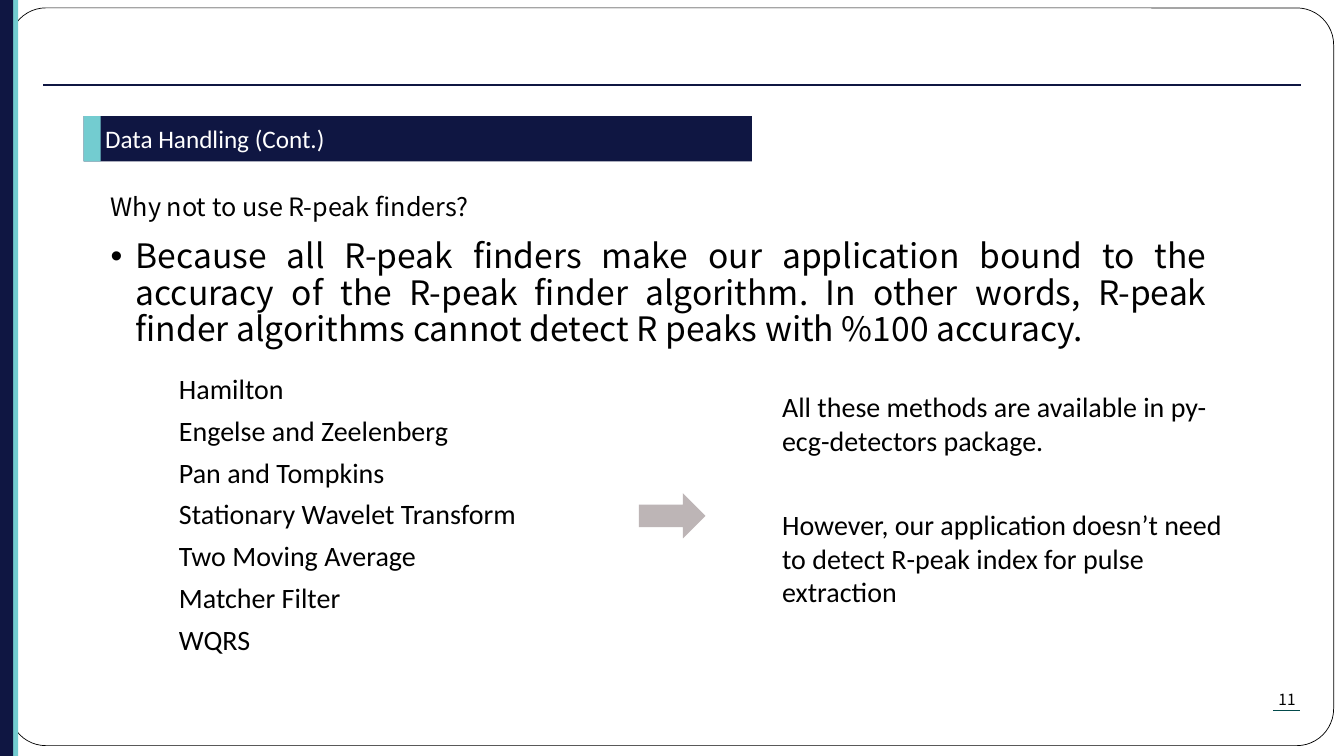
"""Build the Data Handling slide on R-peak finders."""
from dataclasses import dataclass

from lxml.etree import SubElement
from pptx import Presentation
from pptx.dml.color import RGBColor
from pptx.enum.shapes import MSO_CONNECTOR, MSO_SHAPE
from pptx.enum.text import MSO_ANCHOR, PP_ALIGN
from pptx.oxml.ns import qn
from pptx.slide import Slide
from pptx.util import Cm, Pt

NAVY = RGBColor(0x0F, 0x16, 0x42)
TURQUOISE = RGBColor(0x73, 0xCC, 0xD0)
TEAL = RGBColor(0x02, 0x4A, 0x4B)
GREY = RGBColor(0xBD, 0xB5, 0xB6)
WHITE = RGBColor(0xFF, 0xFF, 0xFF)
BLACK = RGBColor(0x00, 0x00, 0x00)

LATIN_FONT = "Calibri"
KOREAN_FONT = "Noto Sans CJK KR"
ITEM_GAP = 5.8
STATEMENT_GAP = 36


@dataclass(frozen=True)
class Box:
    left: float
    top: float
    width: float
    height: float


@dataclass(frozen=True)
class Panel:
    box: Box
    fill: RGBColor
    kind: MSO_SHAPE = MSO_SHAPE.RECTANGLE
    outline: RGBColor | None = None
    corner: float | None = None


@dataclass(frozen=True)
class Rule:
    left: float
    right: float
    height: float
    color: RGBColor
    weight: float


@dataclass(frozen=True)
class TextBlock:
    box: Box
    lines: tuple[str, ...]
    size: int
    font: str = LATIN_FONT
    color: RGBColor = BLACK
    alignment: PP_ALIGN = PP_ALIGN.LEFT
    anchor: MSO_ANCHOR = MSO_ANCHOR.TOP
    opening_gap: float = 0
    gap: float = 0
    spacing: float = 1.0
    inset: float = 0.25
    bullet: bool = False


TITLE_BAR = Box(2.11, 2.93, 16.84, 1.14)

PANELS = (
    Panel(Box(0.23, 0.2, 33.38, 18.59), WHITE, MSO_SHAPE.ROUNDED_RECTANGLE, BLACK, 0.05),
    Panel(Box(0.13, 0, 0.33, 19.05), TURQUOISE),
    Panel(Box(0, 0, 0.33, 19.05), NAVY),
    Panel(TITLE_BAR, NAVY),
    Panel(Box(TITLE_BAR.left, TITLE_BAR.top, 0.43, TITLE_BAR.height), TURQUOISE),
    Panel(Box(16.1, 12.43, 1.68, 1.14), GREY, MSO_SHAPE.RIGHT_ARROW),
)

RULES = (
    Rule(1.09, 32.79, 2.14, NAVY, 1),
    Rule(32.08, 32.77, 17.91, TEAL, 0.5),
)

TEXT_BLOCKS = (
    TextBlock(TITLE_BAR, ("Data Handling (Cont.)",), 18, color=WHITE,
              anchor=MSO_ANCHOR.MIDDLE, inset=0.54),
    TextBlock(Box(2.54, 4.32, 13.59, 1.12), ("Why not to use R-peak finders?",), 18,
              KOREAN_FONT, alignment=PP_ALIGN.JUSTIFY, opening_gap=10, spacing=1.5),
    TextBlock(Box(2.54, 5.92, 28.12, 2.97), (
        "Because all R-peak finders make our application bound to the accuracy of the "
        "R-peak finder algorithm. In other words, R-peak finder algorithms cannot detect "
        "R peaks with %100 accuracy.",), 24, KOREAN_FONT,
              alignment=PP_ALIGN.JUSTIFY, opening_gap=10, spacing=0.9, bullet=True),
    TextBlock(Box(4.26, 9.24, 10.13, 7.52), (
        "Hamilton", "Engelse and Zeelenberg", "Pan and Tompkins",
        "Stationary Wavelet Transform", "Two Moving Average", "Matcher Filter", "WQRS",
    ), 20, opening_gap=ITEM_GAP, gap=ITEM_GAP),
    TextBlock(Box(19.46, 9.7, 11.86, 7.32), (
        "All these methods are available in py-ecg-detectors package.",
        "However, our application doesn’t need to detect R-peak index for pulse extraction",
    ), 20, opening_gap=ITEM_GAP, gap=STATEMENT_GAP),
    TextBlock(Box(31.57, 17.26, 1.73, 0.74), ("11",), 11, KOREAN_FONT,
              alignment=PP_ALIGN.CENTER),
)


def draw_panel(slide: Slide, panel: Panel) -> None:
    box = panel.box
    shape = slide.shapes.add_shape(
        panel.kind, Cm(box.left), Cm(box.top), Cm(box.width), Cm(box.height))
    shape.shadow.inherit = False
    shape.fill.solid()
    shape.fill.fore_color.rgb = panel.fill
    if panel.corner is not None:
        shape.adjustments[0] = panel.corner
    if panel.outline is None:
        shape.line.fill.background()
    else:
        shape.line.color.rgb = panel.outline
        shape.line.width = Pt(0.5)


def draw_rule(slide: Slide, rule: Rule) -> None:
    connector = slide.shapes.add_connector(
        MSO_CONNECTOR.STRAIGHT,
        Cm(rule.left), Cm(rule.height), Cm(rule.right), Cm(rule.height))
    connector.line.color.rgb = rule.color
    connector.line.width = Pt(rule.weight)
    SubElement(connector._element.spPr, qn("a:effectLst"))


def draw_text(slide: Slide, block: TextBlock) -> None:
    box = block.box
    shape = slide.shapes.add_textbox(
        Cm(box.left), Cm(box.top), Cm(box.width), Cm(box.height))
    frame = shape.text_frame
    frame.word_wrap = True
    frame.vertical_anchor = block.anchor
    frame.margin_left = Cm(block.inset)
    for index, line in enumerate(block.lines):
        paragraph = frame.add_paragraph() if index else frame.paragraphs[0]
        paragraph.alignment = block.alignment
        paragraph.line_spacing = block.spacing
        paragraph.space_before = Pt(block.gap if index else block.opening_gap)
        if block.bullet:
            properties = paragraph._p.get_or_add_pPr()
            properties.set("marL", str(Cm(0.63)))
            properties.set("indent", str(Cm(-0.63)))
            SubElement(properties, qn("a:buFont"), typeface="Arial")
            SubElement(properties, qn("a:buChar"), char="•")
        run = paragraph.add_run()
        run.text = line
        run.font.size = Pt(block.size)
        run.font.name = block.font
        run.font.color.rgb = block.color


def main() -> None:
    presentation = Presentation()
    presentation.slide_width = Cm(33.87)
    presentation.slide_height = Cm(19.05)
    slide = presentation.slides.add_slide(presentation.slide_layouts[6])
    for panel in PANELS:
        draw_panel(slide, panel)
    for rule in RULES:
        draw_rule(slide, rule)
    for block in TEXT_BLOCKS:
        draw_text(slide, block)
    presentation.save("out.pptx")


if __name__ == "__main__":
    main()
